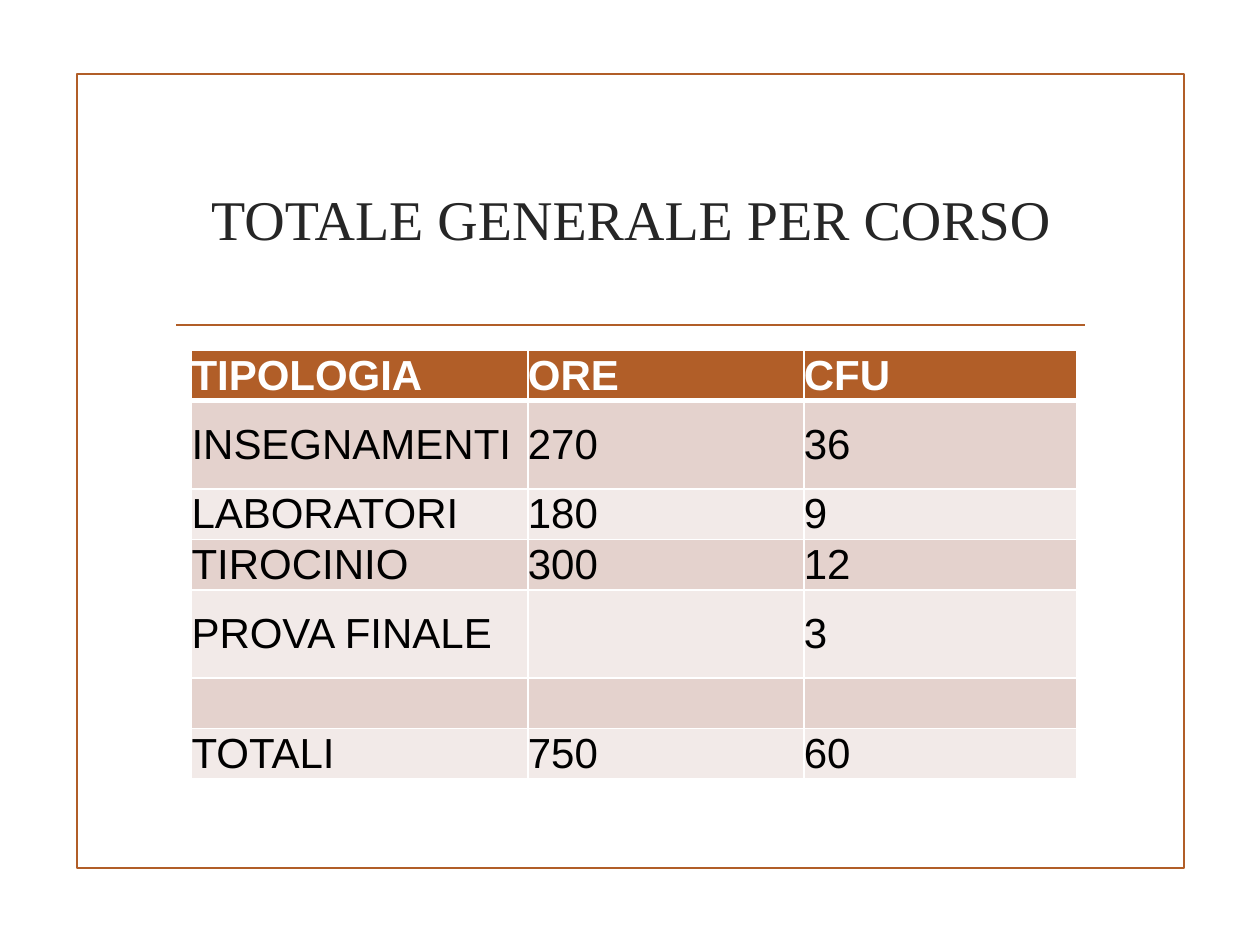
import pptx
import pptx.dml.color
import pptx.enum.shapes
import pptx.enum.text
import pptx.oxml
import pptx.oxml.ns
import pptx.util
from pptx.util import Inches

RUST, WHITE, BLACK = "B15E28", "FFFFFF", "000000"
BANDS = ("E4D2CD", "F2EAE8")
COLUMN_WIDTHS = (2.67, 2.19, 2.17)
ROW_HEIGHTS = (0.35, 0.7, 0.35, 0.35, 0.7, 0.35, 0.35)
TOTALS = (
    ("TIPOLOGIA", "ORE", "CFU"),
    ("INSEGNAMENTI", "270", "36"),
    ("LABORATORI", "180", "9"),
    ("TIROCINIO", "300", "12"),
    ("PROVA FINALE", "", "3"),
    ("", "", ""),
    ("TOTALI", "750", "60"),
)


def rgb(value):
    """Return the colour for a hex string."""
    return pptx.dml.color.RGBColor.from_string(value)


def write(tf, text, *, size, font, color, bold=False, align=None):
    """Write one formatted run, vertically centred without insets."""
    tf.word_wrap = True
    p = tf.paragraphs[0]
    p.alignment = align
    if text:
        r = p.add_run()
        r.text = text
        r.font.size = pptx.util.Pt(size)
        r.font.name = font
        r.font.bold = bold
        r.font.color.rgb = rgb(color)
    else:
        p.font.size = pptx.util.Pt(size)


def add_frame(s, left, top, width, height):
    """Outline the page with a rust rectangle."""
    sp = s.shapes.add_shape(pptx.enum.shapes.MSO_SHAPE.RECTANGLE, left, top, width, height)
    sp.shadow.inherit = False
    sp.fill.background()
    sp.line.color.rgb = rgb(RUST)
    sp.line.width = pptx.util.Pt(1.25)


def add_title(s, left, top, width, height):
    """Place the centred heading."""
    tf = s.shapes.add_textbox(left, top, width, height).text_frame
    tf.vertical_anchor = pptx.enum.text.MSO_ANCHOR.MIDDLE
    write(tf, "TOTALE GENERALE PER CORSO", size=32, font="Times New Roman",
          color="262626", align=pptx.enum.text.PP_ALIGN.CENTER)


def add_rule(s, left, top, width):
    """Draw the horizontal rule below the heading."""
    line = s.shapes.add_connector(pptx.enum.shapes.MSO_CONNECTOR.STRAIGHT,
                                  left, top, left + width, top)
    line.line.color.rgb = rgb(RUST)
    line.line.width = pptx.util.Pt(1.25)
    props = line._element.spPr
    props.append(props.makeelement(pptx.oxml.ns.qn("a:effectLst"), {}))


def set_borders(cell, bottom):
    """Give a cell white borders, with its own bottom width in points."""
    props = cell._tc.get_or_add_tcPr()
    widths = {"lnL": 1, "lnR": 1, "lnT": 1, "lnB": bottom}
    for i, (tag, width) in enumerate(widths.items()):
        props.insert(i, pptx.oxml.parse_xml(
            f'<a:{tag} {pptx.oxml.ns.nsdecls("a")} w="{pptx.util.Pt(width)}">'
            f'<a:solidFill><a:srgbClr val="{WHITE}"/></a:solidFill></a:{tag}>'))


def add_totals(s, left, top, width, height):
    """Build the banded table of hours and credits."""
    table = s.shapes.add_table(len(TOTALS), len(COLUMN_WIDTHS), left, top, width, height).table
    for column, size in zip(table.columns, COLUMN_WIDTHS):
        column.width = Inches(size)
    for row, size in zip(table.rows, ROW_HEIGHTS):
        row.height = Inches(size)
    for i, values in enumerate(TOTALS):
        header = i == 0
        for j, text in enumerate(values):
            cell = table.cell(i, j)
            cell.margin_left = cell.margin_right = cell.margin_top = cell.margin_bottom = 0
            cell.vertical_anchor = pptx.enum.text.MSO_ANCHOR.MIDDLE
            cell.fill.solid()
            cell.fill.fore_color.rgb = rgb(RUST if header else BANDS[(i - 1) % 2])
            write(cell.text_frame, text, size=24, font="Arial",
                  color=WHITE if header else BLACK, bold=header)
            set_borders(cell, 3 if header else 1)


def main():
    """Build and save the slide."""
    prs = pptx.Presentation()
    prs.slide_width, prs.slide_height = Inches(10), Inches(7.5)
    s = prs.slides.add_slide(prs.slide_layouts[6])
    add_frame(s, Inches(0.61), Inches(0.59), Inches(8.79), Inches(6.3))
    add_rule(s, Inches(1.4), Inches(2.58), Inches(7.21))
    add_title(s, Inches(1.29), Inches(1.02), Inches(7.44), Inches(1.43))
    add_totals(s, Inches(1.52), Inches(2.78), Inches(7.03), Inches(3.15))
    prs.save("out.pptx")


if __name__ == "__main__":
    main()
